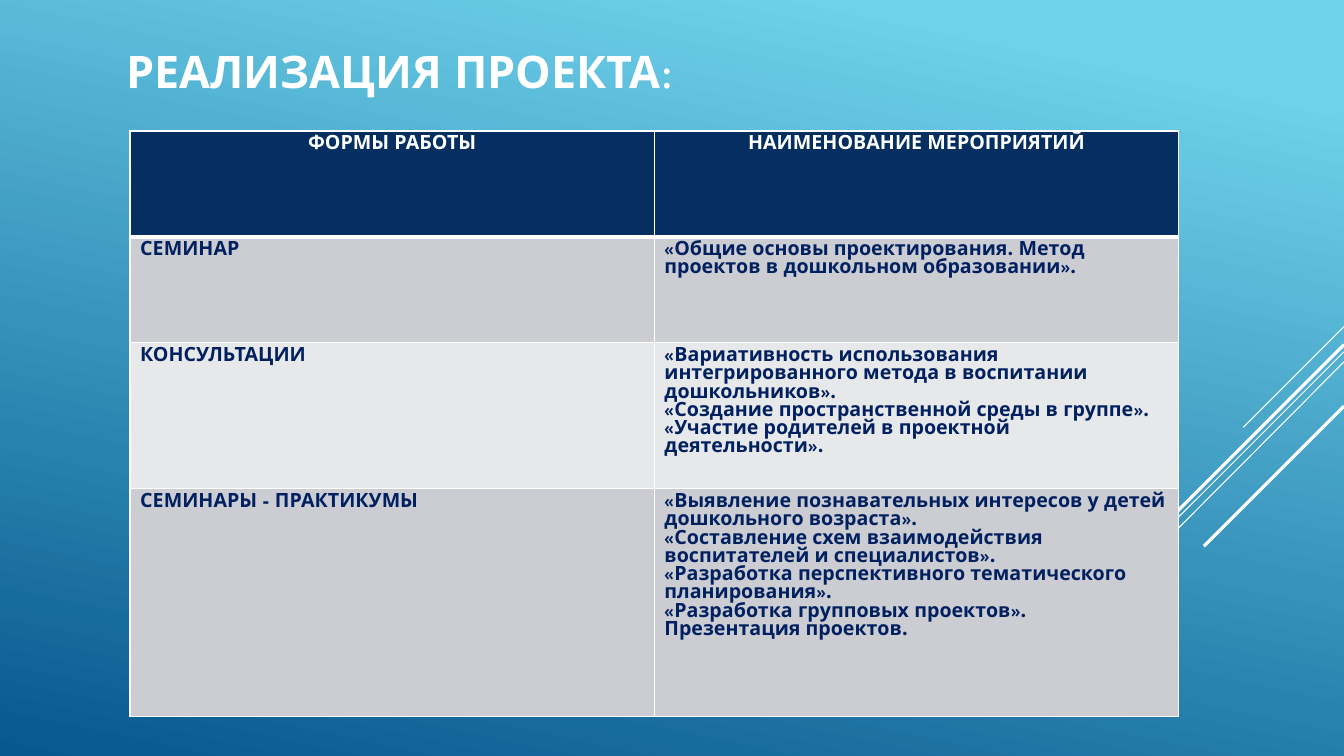
from lxml import etree
from pptx import Presentation
from pptx.dml.color import RGBColor
from pptx.enum.shapes import MSO_CONNECTOR
from pptx.enum.text import MSO_ANCHOR, PP_ALIGN
from pptx.oxml.ns import qn
from pptx.util import Inches, Pt

WHITE = RGBColor(0xFF, 0xFF, 0xFF)
SKY = RGBColor(0x6E, 0xD2, 0xEB)
DEEP_BLUE = RGBColor(0x06, 0x58, 0x8E)
HEADER_NAVY = RGBColor(0x05, 0x2F, 0x61)
TEXT_NAVY = RGBColor(0x00, 0x20, 0x60)
BAND_DARK = RGBColor(0xCC, 0xCD, 0xD2)
BAND_LIGHT = RGBColor(0xE7, 0xE8, 0xEA)
FONT = "League Spartan"


def add_span(para, text, size, color, bold=True):
    span = para.add_run()
    span.text = text
    span.font.name = FONT
    span.font.size = Pt(size)
    span.font.bold = bold
    span.font.color.rgb = color


def add_border(cell, position, side, width):
    line = etree.Element(qn(f"a:ln{side}"), w=str(Pt(width)))
    fill = etree.SubElement(line, qn("a:solidFill"))
    etree.SubElement(fill, qn("a:srgbClr"), val=str(WHITE))
    cell._tc.get_or_add_tcPr().insert(position, line)


deck = Presentation()
deck.slide_width = Inches(13.33)
deck.slide_height = Inches(7.5)
page = deck.slides.add_slide(deck.slide_layouts[5])

# Background gradient
background = page.background.fill
background.gradient()
background.gradient_angle = 258
for stop, color, position in zip(background.gradient_stops, (SKY, DEEP_BLUE), (0.1, 1)):
    stop.color.rgb = color
    stop.position = position

# Diagonal lines at the right edge: start y, end x, end y, width
diagonals = [
    (3.24, 12.33, 4.24, 0.75),
    (3.49, 10.07, 6.75, 0.75),
    (3.59, 11.26, 5.67, 0.75),
    (3.42, 11.42, 5.33, 2.25),
    (4.03, 11.94, 5.42, 2.25),
]
for start_y, end_x, end_y, width in diagonals:
    diagonal = page.shapes.add_connector(
        MSO_CONNECTOR.STRAIGHT, Inches(13.33), Inches(start_y), Inches(end_x), Inches(end_y))
    diagonal.line.color.rgb = WHITE
    diagonal.line.width = Pt(width)
    etree.SubElement(diagonal._element.spPr, qn("a:effectLst"))

# Title
title = page.shapes.title
title.left, title.top = Inches(1.25), Inches(0.43)
title.width, title.height = Inches(10.44), Inches(0.65)
frame = title.text_frame
frame.margin_left = frame.margin_right = frame.margin_top = frame.margin_bottom = 0
frame.vertical_anchor = MSO_ANCHOR.TOP
frame.word_wrap = True
para = frame.paragraphs[0]
para.alignment = PP_ALIGN.LEFT
add_span(para, "РЕАЛИЗАЦИЯ ПРОЕКТА", 32, WHITE)
add_span(para, ":", 32, WHITE, bold=False)

# Table of activities
rows = [
    (1.05, HEADER_NAVY, "ФОРМЫ РАБОТЫ", ["НАИМЕНОВАНИЕ МЕРОПРИЯТИЙ"]),
    (1.05, BAND_DARK, "СЕМИНАР", [
        "«Общие основы проектирования. Метод проектов в дошкольном образовании».",
    ]),
    (1.45, BAND_LIGHT, "КОНСУЛЬТАЦИИ", [
        "«Вариативность использования интегрированного метода в воспитании дошкольников».",
        "«Создание пространственной среды в группе».",
        "«Участие родителей в проектной деятельности».",
    ]),
    (2.26, BAND_DARK, "СЕМИНАРЫ - ПРАКТИКУМЫ", [
        "«Выявление познавательных интересов у детей дошкольного возраста».",
        "«Составление схем взаимодействия воспитателей и специалистов».",
        "«Разработка перспективного тематического планирования».",
        "«Разработка групповых проектов».",
        "Презентация проектов.",
    ]),
]
table = page.shapes.add_table(
    len(rows), 2, Inches(1.29), Inches(1.3), Inches(10.4), Inches(5.81)).table
for column in table.columns:
    column.width = Inches(5.2)

for row_index, (height, color, form, events) in enumerate(rows):
    table.rows[row_index].height = Inches(height)
    is_header = row_index == 0
    for column_index, lines in enumerate(([form], events)):
        cell = table.cell(row_index, column_index)
        cell.fill.solid()
        cell.fill.fore_color.rgb = color
        top_width = 3 if row_index == 1 else 1
        bottom_width = 3 if is_header else 1
        borders = [("L", 1), ("R", 1), ("T", top_width), ("B", bottom_width)]
        for position, (side, width) in enumerate(borders):
            add_border(cell, position, side, width)
        for line_index, text in enumerate(lines):
            frame = cell.text_frame
            para = frame.add_paragraph() if line_index else frame.paragraphs[0]
            para.alignment = PP_ALIGN.CENTER if is_header else PP_ALIGN.LEFT
            para.line_spacing = Pt(13)
            add_span(para, text, 14, WHITE if is_header else TEXT_NAVY)

deck.save("out.pptx")
